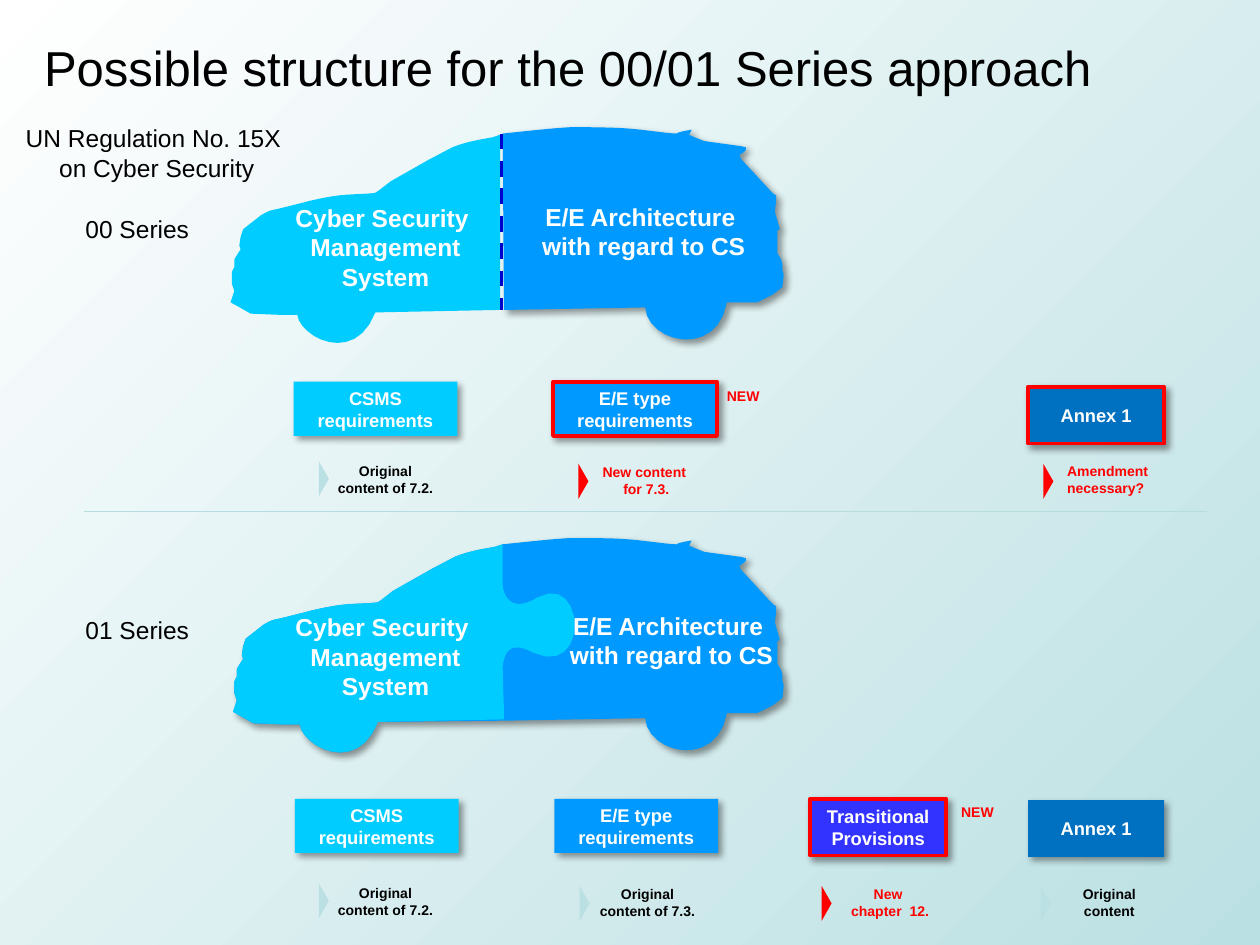
"""Builds the slide on the 00/01 Series structure of the cyber security regulation."""
import copy
from dataclasses import dataclass

import lxml.etree
import pptx
import pptx.dml.color
import pptx.enum.dml
import pptx.enum.shapes
import pptx.enum.text
import pptx.oxml
import pptx.oxml.ns
import pptx.util

PX = 9144
FONT = "Arial"
COLORS = {
    "white": "FFFFFF", "black": "000000", "pale": "BBE0E3", "rule": "B6DCDF", "cyan": "00CCFF",
    "blue": "0099FF", "annex": "0070C0", "violet": "3333FF", "navy": "0000CC", "red": "FF0000",
}
ALIGN = pptx.enum.text.PP_ALIGN
SHAPE = pptx.enum.shapes.MSO_SHAPE

REAR = [
    (400, 246), (512, 244), (514, 272, 569, 285, 577, 240), (601, 240), (613, 234), (621, 228),
    (622, 218), (621, 214), (621, 210), (620, 206), (619, 204), (617, 201), (617, 183), (619, 182),
    (615, 168), (616, 160), (616, 155), (614, 154), (612, 152), (588, 126), (587, 123), (590, 121),
    (592, 119), (592, 117), (588, 116), (559, 112), (549, 108), (547, 107), (549, 103), (543, 104),
    (539, 105), (537, 106), (530, 106, 512, 103, 498, 102), (484, 101, 469, 101, 452, 101),
    (436, 102, 409, 105, 399, 106),
]
NOSE = [
    (397, 107), (391, 109), (380, 111), (375, 112, 366, 114, 359, 117), (340, 127), (310, 144),
    (301, 151), (298, 153), (293, 154, 280, 154, 270, 155), (261, 156, 247, 159, 240, 161),
    (220, 166), (214, 167, 212, 168, 207, 171), (193, 182), (191, 188), (190, 195), (191, 198),
    (189, 201), (186, 206), (186, 212), (184, 216), (184, 225), (186, 231), (184, 237), (183, 240),
    (192, 245), (199, 249), (223, 250), (236, 250), (238, 267, 281, 291, 298, 248),
]
JIGSAW = [
    (400, 571), (400, 558, 399, 543, 399, 529), (400, 518, 405, 508, 423, 518),
    (468, 539, 465, 454, 427, 474), (405, 488, 399, 471, 399, 464), (399, 446, 399, 449, 399, 431),
]


@dataclass
class Label:
    x: int
    y: int
    w: int
    h: int
    text: str
    size: float = 8
    color: str = "black"
    bold: bool = True
    align: ALIGN = ALIGN.CENTER
    wrap: bool = False


@dataclass
class Box:
    x: int
    y: int
    w: int
    h: int
    text: str
    fill: str
    framed: bool = False


@dataclass
class Marker:
    x: int
    y: int
    fill: str = "pale"


CAR_TEXT = dict(size=14, color="white", wrap=True)
SERIES = dict(size=14, bold=False, align=ALIGN.LEFT)
NEW = dict(color="red", align=ALIGN.LEFT)
CSMS = "Cyber Security \vManagement System"
ARCHITECTURE = "E/E Architecture \vwith regard to CS"
CAR_00 = [Label(219, 156, 174, 81, CSMS, **CAR_TEXT), Label(418, 155, 186, 81, ARCHITECTURE, **CAR_TEXT)]
CAR_01 = [Label(219, 481, 174, 81, CSMS, **CAR_TEXT), Label(436, 480, 194, 81, ARCHITECTURE, **CAR_TEXT)]
BOXES = [
    Box(233, 303, 130, 43, "CSMS requirements", "cyan"),
    Box(439, 303, 130, 43, "E/E type requirements", "blue", True),
    Box(816, 307, 108, 45, "Annex 1", "annex", True),
    Box(234, 634, 130, 43, "CSMS requirements", "cyan"),
    Box(440, 634, 130, 43, "E/E type requirements", "blue"),
    Box(643, 634, 108, 45, "Transitional Provisions", "violet", True),
    Box(816, 635, 108, 45, "Annex 1", "annex"),
]
MARKERS = [
    Marker(243, 376), Marker(449, 378, "red"), Marker(818, 378, "red"),
    Marker(243, 711), Marker(450, 713), Marker(642, 713, "red"), Marker(816, 713),
]
LABELS = [
    Label(-17, 93, 283, 57, "UN Regulation No. 15X \von Cyber Security", 14, bold=False, wrap=True),
    Label(58, 165, 103, 34, "00 Series", **SERIES),
    Label(58, 483, 103, 34, "01 Series", **SERIES),
    Label(258, 362, 96, 37, "Original\vcontent of 7.2."),
    Label(468, 363, 90, 37, "New content \vfor 7.3.", color="red"),
    Label(567, 303, 46, 24, "NEW", **NEW),
    Label(837, 362, 88, 37, "Amendment \vnecessary?", **NEW),
    Label(258, 697, 96, 37, "Original\vcontent of 7.2."),
    Label(466, 698, 96, 37, "Original\vcontent of 7.3."),
    Label(665, 698, 83, 37, "New \vchapter  12.", color="red"),
    Label(753, 633, 46, 24, "NEW", **NEW),
    Label(849, 698, 63, 37, "Original\vcontent"),
]


def rgb(name: str) -> pptx.dml.color.RGBColor:
    return pptx.dml.color.RGBColor.from_string(COLORS[name])


def emu(*lengths: int) -> list[int]:
    return [n * PX for n in lengths]


def write(tf, text: str, size: float, color: str, bold: bool, align: ALIGN) -> None:
    p = tf.paragraphs[0]
    p.text = text
    p.alignment = align
    for r in p.runs:
        r.font.name, r.font.size, r.font.bold = FONT, pptx.util.Pt(size), bold
        r.font.color.rgb = rgb(color)
    for br in p._p.findall(pptx.oxml.ns.qn("a:br")):
        br.append(copy.deepcopy(p.runs[0]._r.rPr))


def paint(sp, fill: str, shadow: bool = False) -> None:
    sp.shadow.inherit = False
    sp.fill.solid()
    sp.fill.fore_color.rgb = rgb(fill)
    sp.line.fill.background()
    if shadow:
        effects = sp._element.spPr.find(pptx.oxml.ns.qn("a:effectLst"))
        effects.append(pptx.oxml.parse_xml(
            f'<a:outerShdw {pptx.oxml.ns.nsdecls("a")} blurRad="50800" dist="38100" dir="2700000" '
            'algn="tl" rotWithShape="0"><a:srgbClr val="000000"><a:alpha val="40000"/>'
            '</a:srgbClr></a:outerShdw>'))


def add_label(shapes, item: Label) -> None:
    tf = shapes.add_textbox(*emu(item.x, item.y, item.w, item.h)).text_frame
    tf.word_wrap = item.wrap
    tf.auto_size = pptx.enum.text.MSO_AUTO_SIZE.SHAPE_TO_FIT_TEXT
    write(tf, item.text, item.size, item.color, item.bold, item.align)


def add_box(shapes, item: Box) -> None:
    sp = shapes.add_shape(SHAPE.RECTANGLE, *emu(item.x, item.y, item.w, item.h))
    paint(sp, item.fill, shadow=True)
    if item.framed:
        sp.line.color.rgb = rgb("red")
        sp.line.width = pptx.util.Pt(2.25)
    sp.text_frame.vertical_anchor = pptx.enum.text.MSO_ANCHOR.MIDDLE
    write(sp.text_frame, item.text, 10.5, "white", True, ALIGN.CENTER)


def add_marker(shapes, item: Marker) -> None:
    sp = shapes.add_shape(SHAPE.ISOSCELES_TRIANGLE, *emu(item.x, item.y, 28, 8))
    sp.rotation = 90
    paint(sp, item.fill)


def add_line(shapes, ends: tuple, color: str, width: float):
    sp = shapes.add_connector(pptx.enum.shapes.MSO_CONNECTOR.STRAIGHT, *emu(*ends))
    sp.line.color.rgb = rgb(color)
    sp.line.width = pptx.util.Pt(width)
    lxml.etree.SubElement(sp._element.spPr, pptx.oxml.ns.qn("a:effectLst"))
    return sp


def shift(outline: list, dx: int, dy: int) -> list:
    return [tuple(n + (dy if i % 2 else dx) for i, n in enumerate(step)) for step in outline]


def flatten(outline: list, parts: int = 12) -> list:
    """Turns the cubic steps of an outline into short straight ones."""
    points = []
    for step in outline:
        if len(step) == 2:
            points.append(step)
            continue
        corners = [points[-1], step[:2], step[2:4], step[4:]]
        for t in (i / parts for i in range(1, parts + 1)):
            weights = ((1 - t) ** 3, 3 * t * (1 - t) ** 2, 3 * t * t * (1 - t), t ** 3)
            points.append(tuple(sum(w * c[axis] for w, c in zip(weights, corners)) for axis in (0, 1)))
    return points


def add_outline(shapes, outline: list, fill: str, shadow: bool = False) -> None:
    points = [(x * PX, y * PX) for x, y in flatten(outline)]
    builder = shapes.build_freeform(*points[0])
    builder.add_line_segments(points[1:], close=True)
    paint(builder.convert_to_shape(), fill, shadow)


def main() -> None:
    prs = pptx.Presentation()
    prs.slide_width, prs.slide_height = emu(1000, 750)
    s = prs.slides.add_slide(prs.slide_layouts[5])
    bg = s.background.fill
    bg.gradient()
    bg.gradient_angle = 315
    for stop, name in zip(bg.gradient_stops, ("white", "pale")):
        stop.color.rgb = rgb(name)

    title = s.shapes.title
    title.left, title.top, title.width, title.height = emu(25, 25, 950, 57)
    tf = title.text_frame
    tf.auto_size = pptx.enum.text.MSO_AUTO_SIZE.NONE
    tf.vertical_anchor = pptx.enum.text.MSO_ANCHOR.TOP
    write(tf, "Possible structure for the 00/01 Series approach", 28, "black", False, ALIGN.LEFT)

    split = s.shapes.add_group_shape().shapes
    add_outline(split, REAR, "blue", shadow=True)
    add_outline(split, NOSE + [(397, 246)], "cyan")
    add_line(split, (398, 106, 398, 246), "navy", 2.25).line.dash_style = pptx.enum.dml.MSO_LINE.DASH
    joined = s.shapes.add_group_shape().shapes
    nose = shift(NOSE, 2, 325)
    add_outline(joined, shift(REAR, 0, 326) + nose, "blue", shadow=True)
    add_outline(joined, nose + JIGSAW, "cyan")
    for shapes, labels in ((split, CAR_00), (joined, CAR_01), (s.shapes, LABELS)):
        for item in labels:
            add_label(shapes, item)

    add_line(s.shapes, (67, 406, 958, 406), "rule", 0.75)
    for item in BOXES:
        add_box(s.shapes, item)
    for item in MARKERS:
        add_marker(s.shapes, item)
    prs.save("out.pptx")


if __name__ == "__main__":
    main()
